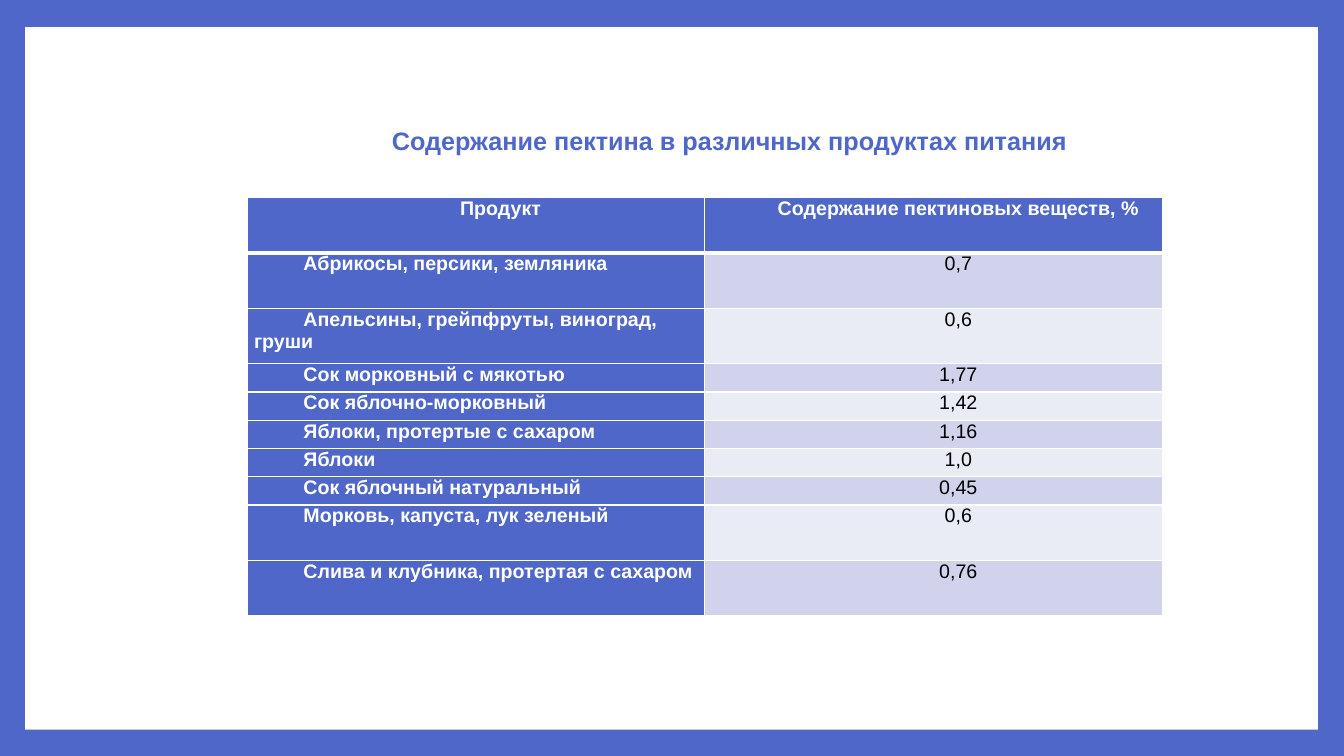
"""Build a slide with a table of pectin content in foods."""
from typing import NamedTuple

from lxml.etree import SubElement
from pptx import Presentation
from pptx.dml.color import RGBColor
from pptx.enum.shapes import MSO_SHAPE
from pptx.enum.text import MSO_ANCHOR, MSO_AUTO_SIZE, PP_ALIGN
from pptx.oxml.ns import qn
from pptx.util import Inches, Pt

BLUE = RGBColor(0x4E, 0x67, 0xC8)
WHITE = RGBColor(0xFF, 0xFF, 0xFF)
BLACK = RGBColor(0, 0, 0)
BANDS = (RGBColor(0xE9, 0xEB, 0xF5), RGBColor(0xD0, 0xD3, 0xEB))
FONT = "Arial"
TALL, SHORT = 0.55, 0.28
COLUMN_WIDTH = 4.54


class Product(NamedTuple):
    name: str
    pectin: str
    height: float


ROWS = (
    Product("Продукт", "Содержание пектиновых веществ, %", TALL),
    Product("Абрикосы, персики, земляника", "0,7", TALL),
    Product("Апельсины, грейпфруты, виноград, груши", "0,6", TALL),
    Product("Сок морковный с мякотью", "1,77", SHORT),
    Product("Сок яблочно-морковный", "1,42", SHORT),
    Product("Яблоки, протертые с сахаром", "1,16", SHORT),
    Product("Яблоки", "1,0", SHORT),
    Product("Сок яблочный натуральный", "0,45", SHORT),
    Product("Морковь, капуста, лук зеленый", "0,6", TALL),
    Product("Слива и клубника, протертая с сахаром", "0,76", TALL),
)


def write_text(frame, text: str, size: int, color: RGBColor, bold: bool, align: PP_ALIGN) -> None:
    frame.text = text
    para = frame.paragraphs[0]
    para.alignment = align
    font = para.font
    font.name, font.size, font.bold = FONT, Pt(size), bold
    font.color.rgb = color
    properties = para._p.get_or_add_pPr()
    properties.set("marL", "0")
    properties.set("indent", str(Inches(0.49)))


def add_borders(cell, top: int, bottom: int) -> None:
    properties = cell._tc.get_or_add_tcPr()
    widths = {"a:lnL": 1, "a:lnR": 1, "a:lnT": top, "a:lnB": bottom}
    for position, (side, width) in enumerate(widths.items()):
        line = SubElement(properties, qn(side), w=str(Pt(width)))
        fill = SubElement(line, qn("a:solidFill"))
        SubElement(fill, qn("a:srgbClr"), val=str(WHITE))
        properties.insert(position, line)


def add_background(page) -> None:
    page.background.fill.solid()
    page.background.fill.fore_color.rgb = BLUE
    panel = page.shapes.add_shape(
        MSO_SHAPE.RECTANGLE, Inches(0.25), Inches(0.27), Inches(12.82), Inches(6.97))
    panel.shadow.inherit = False
    panel.fill.solid()
    panel.fill.fore_color.rgb = WHITE
    panel.line.fill.background()
    page.shapes._spTree.insert(2, panel._element)


def add_title(page) -> None:
    title = page.shapes.title
    title.left, title.top = Inches(3.29), Inches(1.19)
    title.width, title.height = Inches(7.4), Inches(0.4)
    frame = title.text_frame
    frame.word_wrap = False
    frame.auto_size = MSO_AUTO_SIZE.SHAPE_TO_FIT_TEXT
    frame.vertical_anchor = MSO_ANCHOR.MIDDLE
    write_text(frame, "Содержание пектина в различных продуктах питания",
               18, BLUE, True, PP_ALIGN.CENTER)


def add_pectin_table(page) -> None:
    height = sum(product.height for product in ROWS)
    table = page.shapes.add_table(
        len(ROWS), 2, Inches(2.45), Inches(1.96),
        Inches(2 * COLUMN_WIDTH), Inches(height)).table
    for column in table.columns:
        column.width = Inches(COLUMN_WIDTH)
    for row, product in enumerate(ROWS):
        table.rows[row].height = Inches(product.height)
        for column, text in enumerate((product.name, product.pectin)):
            cell = table.cell(row, column)
            heading = row == 0 or column == 0
            centered = row == 0 or column == 1
            cell.margin_left = cell.margin_right = Inches(0.07)
            cell.margin_top = cell.margin_bottom = 0
            cell.fill.solid()
            cell.fill.fore_color.rgb = BLUE if heading else BANDS[row % 2]
            write_text(cell.text_frame, text, 14, WHITE if heading else BLACK, heading,
                       PP_ALIGN.CENTER if centered else PP_ALIGN.LEFT)
            add_borders(cell, top=3 if row == 1 else 1, bottom=3 if row == 0 else 1)


def main() -> None:
    deck = Presentation()
    deck.slide_width, deck.slide_height = Inches(13.33), Inches(7.5)
    page = deck.slides.add_slide(deck.slide_layouts.get_by_name("Title Only"))
    add_background(page)
    add_title(page)
    add_pectin_table(page)
    deck.save("out.pptx")


if __name__ == "__main__":
    main()
